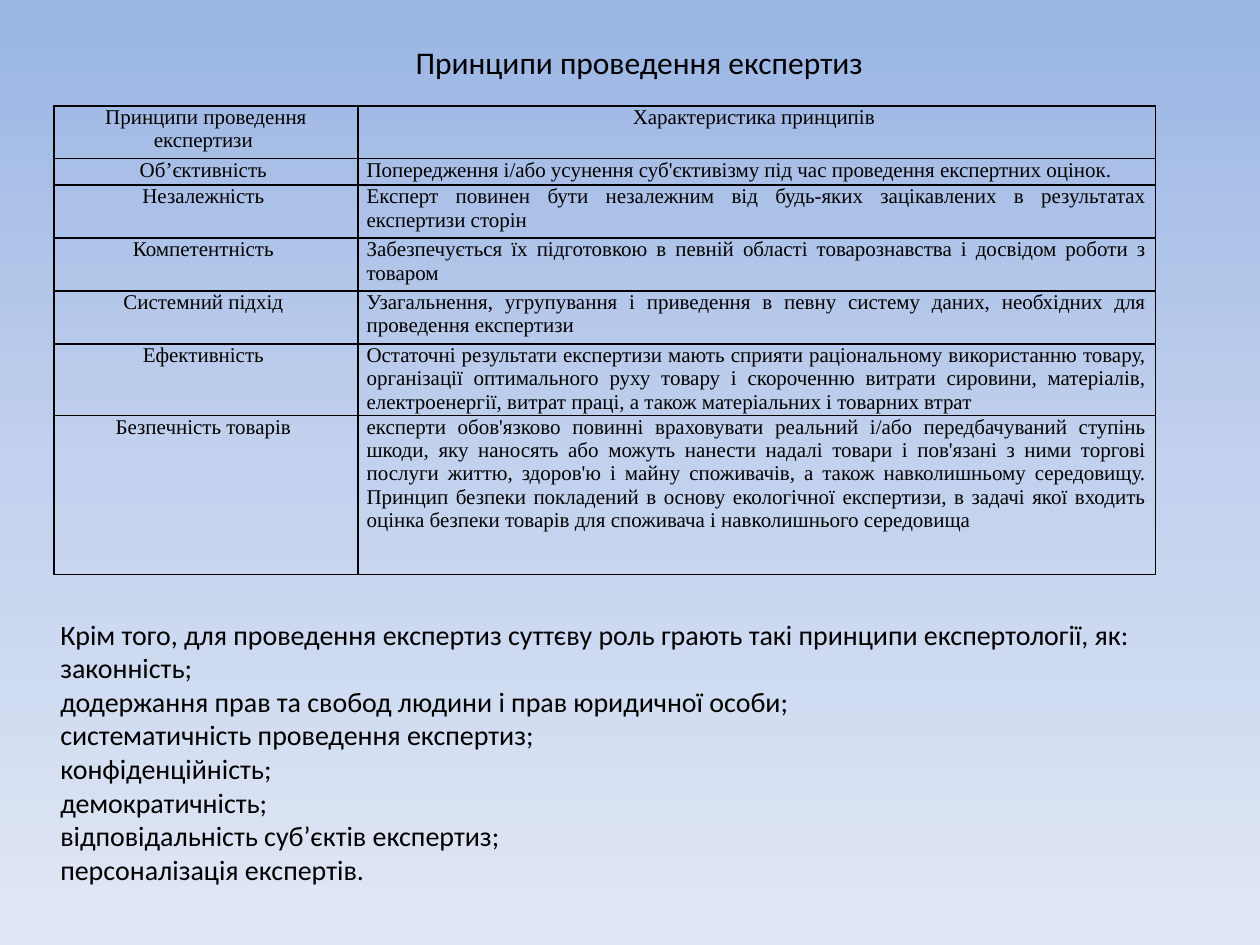
import copy
from typing import NamedTuple

import pptx
import pptx.dml.color
import pptx.enum.text
import pptx.oxml
import pptx.oxml.ns
import pptx.slide
import pptx.table
import pptx.util
from pptx.util import Inches

RGBColor = pptx.dml.color.RGBColor
Align = pptx.enum.text.PP_ALIGN
qn = pptx.oxml.ns.qn

BLACK = RGBColor(0x00, 0x00, 0x00)
BACKGROUND_STOPS = (
    (0.0, RGBColor(0x9A, 0xB5, 0xE4)),
    (0.5, RGBColor(0xC2, 0xD1, 0xED)),
    (1.0, RGBColor(0xE1, 0xE8, 0xF5)),
)


class Principle(NamedTuple):
    name: str
    description: str
    height: float


class TextBlock(NamedTuple):
    left: float
    top: float
    width: float
    height: float
    lines: tuple[str, ...]
    size: int
    alignment: Align


HEADER = Principle("Принципи проведення експертизи ", "Характеристика принципів ", 0.42)
PRINCIPLES = (
    Principle(
        "Об’єктивність ",
        "Попередження і/або усунення суб'єктивізму під час проведення експертних оцінок.",
        0.21,
    ),
    Principle(
        "Незалежність ",
        "Експерт повинен бути незалежним від будь-яких зацікавлених в результатах "
        "експертизи сторін",
        0.42,
    ),
    Principle(
        "Компетентність ",
        "Забезпечується їх підготовкою в певній області товарознавства і досвідом "
        "роботи з товаром",
        0.42,
    ),
    Principle(
        "Системний підхід ",
        "Узагальнення, угрупування і приведення в певну систему даних, необхідних для "
        "проведення експертизи",
        0.42,
    ),
    Principle(
        "Ефективність ",
        "Остаточні результати експертизи мають сприяти раціональному використанню товару, "
        "організації оптимального руху товару і скороченню витрати сировини, матеріалів, "
        "електроенергії, витрат праці, а також матеріальних і товарних втрат",
        0.57,
    ),
    Principle(
        "Безпечність товарів ",
        "експерти обов'язково повинні враховувати реальний і/або передбачуваний ступінь "
        "шкоди, яку наносять або можуть нанести надалі товари і пов'язані з ними торгові "
        "послуги життю, здоров'ю і майну споживачів, а також навколишньому середовищу. "
        "Принцип безпеки покладений в основу екологічної експертизи, в задачі якої входить "
        "оцінка безпеки товарів для споживача і навколишнього середовища",
        1.26,
    ),
)
COLUMN_WIDTHS = (2.41, 6.33)

TITLE = TextBlock(
    1.06, 0.29, 8.03, 0.4, ("Принципи проведення експертиз",), 18, Align.CENTER
)
FURTHER_PRINCIPLES = TextBlock(
    0.38, 4.85, 9.29, 2.26,
    (
        "Крім того, для проведення експертиз суттєву роль грають такі принципи "
        "експертології, як:",
        "законність;",
        "додержання прав та свобод людини і прав юридичної особи;",
        "систематичність проведення експертиз;",
        "конфіденційність;",
        "демократичність;",
        "відповідальність суб’єктів експертиз;",
        "персоналізація експертів.",
    ),
    16,
    Align.LEFT,
)


def paint_background(slide: pptx.slide.Slide) -> None:
    fill = slide.background.fill
    fill.gradient()
    fill.gradient_angle = 270
    stop_list = slide.element.find(".//" + qn("a:gsLst"))
    stop_list.append(copy.deepcopy(stop_list[0]))
    for stop, (position, color) in zip(fill.gradient_stops, BACKGROUND_STOPS):
        stop.position = position
        stop.color.rgb = color


def format_text(
    text_frame: pptx.text.text.TextFrame, font_name: str, size: int, alignment: Align
) -> None:
    for paragraph in text_frame.paragraphs:
        paragraph.alignment = alignment
        for run in paragraph.runs:
            run.font.name = font_name
            run.font.size = pptx.util.Pt(size)
            run.font.color.rgb = BLACK


def add_text_block(slide: pptx.slide.Slide, block: TextBlock) -> None:
    shape = slide.shapes.add_textbox(
        Inches(block.left), Inches(block.top), Inches(block.width), Inches(block.height)
    )
    text_frame = shape.text_frame
    text_frame.word_wrap = True
    text_frame.auto_size = pptx.enum.text.MSO_AUTO_SIZE.SHAPE_TO_FIT_TEXT
    text_frame.text = "\n".join(block.lines)
    format_text(text_frame, "Calibri", block.size, block.alignment)


def add_borders(cell: pptx.table._Cell) -> None:
    """Draw a thin black line on all four sides, ahead of the cell's fill."""
    properties = cell._tc.get_or_add_tcPr()
    for index, side in enumerate(("lnL", "lnR", "lnT", "lnB")):
        line = pptx.oxml.parse_xml(
            f'<a:{side} {pptx.oxml.ns.nsdecls("a")} w="{pptx.util.Pt(1)}">'
            f'<a:solidFill><a:srgbClr val="{BLACK}"/></a:solidFill></a:{side}>'
        )
        properties.insert(index, line)


def fill_cell(cell: pptx.table._Cell, text: str, alignment: Align) -> None:
    cell.margin_left = cell.margin_right = Inches(0.07)
    cell.margin_top = cell.margin_bottom = 0
    cell.fill.background()
    add_borders(cell)
    cell.text_frame.text = text
    format_text(cell.text_frame, "Times New Roman", 12, alignment)


def add_principles_table(slide: pptx.slide.Slide) -> None:
    rows = (HEADER, *PRINCIPLES)
    table = slide.shapes.add_table(
        len(rows), len(COLUMN_WIDTHS), Inches(0.43), Inches(0.84),
        Inches(sum(COLUMN_WIDTHS)), Inches(sum(row.height for row in rows)),
    ).table
    table.first_row = False
    table.horz_banding = False
    for column, width in zip(table.columns, COLUMN_WIDTHS):
        column.width = Inches(width)
    for index, row in enumerate(rows):
        table.rows[index].height = Inches(row.height)
        fill_cell(table.cell(index, 0), row.name, Align.CENTER)
        description_alignment = Align.CENTER if row is HEADER else Align.JUSTIFY
        fill_cell(table.cell(index, 1), row.description, description_alignment)


def main() -> None:
    presentation = pptx.Presentation()
    presentation.slide_width = Inches(10)
    presentation.slide_height = Inches(7.5)
    slide = presentation.slides.add_slide(presentation.slide_layouts[6])
    paint_background(slide)
    add_principles_table(slide)
    add_text_block(slide, TITLE)
    add_text_block(slide, FURTHER_PRINCIPLES)
    presentation.save("out.pptx")


if __name__ == "__main__":
    main()
